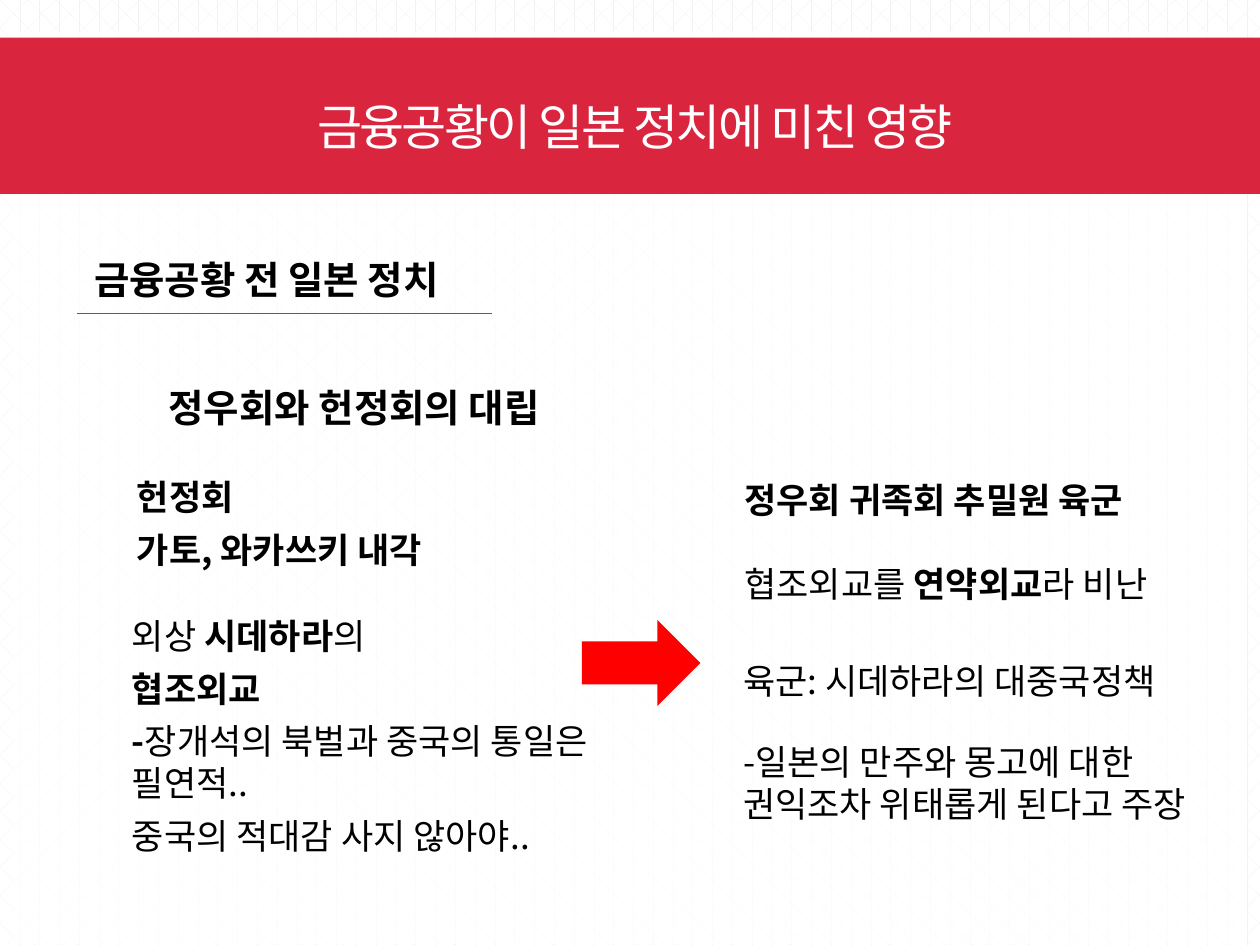
from lxml.etree import SubElement
from pptx import Presentation
from pptx.dml.color import RGBColor
from pptx.enum.dml import MSO_PATTERN
from pptx.enum.shapes import MSO_CONNECTOR, MSO_SHAPE
from pptx.enum.text import MSO_ANCHOR, PP_ALIGN
from pptx.oxml.ns import qn
from pptx.util import Cm, Pt

WHITE = RGBColor(0xFF, 0xFF, 0xFF)
BLACK = RGBColor(0, 0, 0)
PALE = RGBColor(0xF2, 0xF2, 0xF2)
CRIMSON = RGBColor(0xD9, 0x25, 0x3E)
RED = RGBColor(0xFF, 0, 0)
TITLE_FONT = "Noto Sans"
BODY_FONT = "Noto Sans CJK KR"
LINE_RATIO = 1.2
INDENT = Cm(1.27)

TITLE = "금융공황이 일본 정치에 미친 영향"

# BLOCKS: box, size, level, paragraphs of (space before, [(text, bold)])
BLOCKS = [
    ((1.65, 5.03, 9.53, 1.19), 22, 0, [(0, [("금융공황 전 일본 정치", True)])]),
    ((3.15, 7.62, 19.28, 1.19), 22, 0, [(0, [("정우회와 헌정회의 대립", True)])]),
    ((1.24, 9.47, 9.17, 9.65), 20, 1, [
        (6, [("헌정회", True)]),
        (6, [("가토, 와카쓰키 내각", True)]),
    ]),
    ((14.76, 9.53, 10.97, 3.68), 20, 0, [
        (0, [("정우회 귀족회 추밀원 육군", True)]),
        (24, [("협조외교를 ", False), ("연약외교", True), ("라 비난", False)]),
    ]),
    ((14.73, 13.18, 10.41, 3.58), 20, 0, [
        (0, [("육군: 시데하라의 대중국정책", False)]),
        (22, [("-", False), ("일본의 만주와 몽고에 대한", False)]),
        (0, [("권익조차 위태롭게 된다고 주장", False)]),
    ]),
    ((1.14, 12.27, 11.46, 5.18), 20, 1, [
        (6, [("외상 ", False), ("시데하라", True), ("의", False)]),
        (6, [("협조외교", True)]),
        (6, [("-", True), ("장개석의 북벌과 중국의 통일은 필연적..", False)]),
        (6, [("중국의 적대감 사지 않아야..", False)]),
    ]),
]


def add_block(shapes, box):
    frame = shapes.add_textbox(*map(Cm, box)).text_frame
    frame.word_wrap = True
    return frame


def add_run(paragraph, text, font_name, size, color, bold=False):
    run = paragraph.add_run()
    run.text = text
    font = run.font
    font.name, font.size, font.bold = font_name, Pt(size), bold
    font.color.rgb = color
    SubElement(run._r.rPr, qn("a:ea"), typeface=font_name)
    return run


def add_filled(shapes, preset, box, color):
    shape = shapes.add_shape(preset, *map(Cm, box))
    shape.shadow.inherit = False
    shape.fill.solid()
    shape.fill.fore_color.rgb = color
    shape.line.fill.background()
    return shape


def add_paragraphs(frame, size, level, paragraphs):
    for index, (space, runs) in enumerate(paragraphs):
        paragraph = frame.paragraphs[0] if index == 0 else frame.add_paragraph()
        paragraph.level = level
        paragraph.space_before = Pt(space)
        paragraph.line_spacing = Pt(size * LINE_RATIO)
        properties = paragraph._p.get_or_add_pPr()
        properties.set("marL", str(INDENT * level))
        properties.set("indent", "0")
        for text, bold in runs:
            add_run(paragraph, text, BODY_FONT, size, BLACK, bold)


def main():
    deck = Presentation()
    deck.slide_width, deck.slide_height = Cm(25.4), Cm(19.05)
    slide = deck.slides.add_slide(deck.slide_layouts[6])
    shapes = slide.shapes

    backdrop = slide.background.fill
    backdrop.patterned()
    backdrop.pattern = MSO_PATTERN.DIVOT
    backdrop.fore_color.rgb, backdrop.back_color.rgb = PALE, WHITE

    veil = add_filled(shapes, MSO_SHAPE.RECTANGLE, (0.25, 0.64, 24.89, 18.39), WHITE)
    veil_color = veil._element.spPr.find(qn("a:solidFill"))[0]
    SubElement(veil_color, qn("a:alpha"), val="81000")

    banner = shapes.add_group_shape().shapes
    add_filled(banner, MSO_SHAPE.RECTANGLE, (0, 0.76, 25.4, 3.15), CRIMSON)
    title_frame = add_block(banner, (3.91, 1.17, 17.78, 2.13))
    title_frame.vertical_anchor = MSO_ANCHOR.MIDDLE
    title = title_frame.paragraphs[0]
    title.alignment, title.line_spacing = PP_ALIGN.CENTER, 1.5
    title_run = add_run(title, TITLE, TITLE_FONT, 28, WHITE)
    title_run._r.rPr.set("spc", "-150")

    underline = shapes.add_connector(
        MSO_CONNECTOR.STRAIGHT, Cm(1.55), Cm(6.32), Cm(9.91), Cm(6.32))
    underline.line.color.rgb, underline.line.width = CRIMSON, Pt(0.75)
    SubElement(underline._element.spPr, qn("a:effectLst"))

    for box, size, level, paragraphs in BLOCKS:
        add_paragraphs(add_block(shapes, box), size, level, paragraphs)

    add_filled(shapes, MSO_SHAPE.RIGHT_ARROW, (11.73, 12.5, 2.39, 1.73), RED)
    deck.save("out.pptx")


if __name__ == "__main__":
    main()
